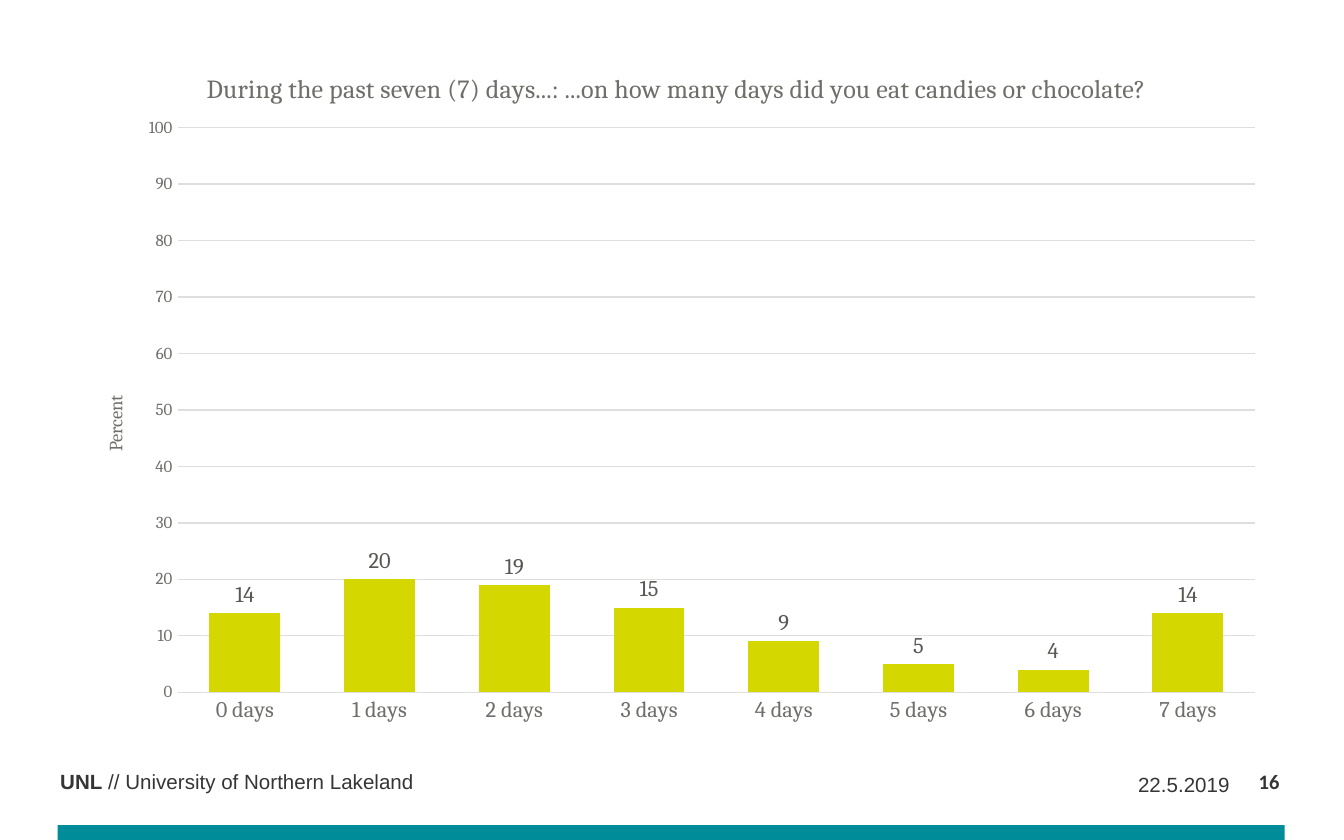
from pptx import Presentation
from pptx.chart.data import CategoryChartData
from pptx.dml.color import RGBColor
from pptx.enum.chart import XL_CHART_TYPE, XL_LABEL_POSITION, XL_TICK_MARK
from pptx.enum.shapes import MSO_SHAPE
from pptx.enum.text import MSO_ANCHOR, PP_ALIGN
from pptx.oxml import parse_xml
from pptx.oxml.ns import nsdecls, qn
from pptx.util import Inches, Pt

COLUMN = XL_CHART_TYPE.COLUMN_CLUSTERED
ABOVE = XL_LABEL_POSITION.OUTSIDE_END
NO_TICK = XL_TICK_MARK.NONE
RECT = MSO_SHAPE.RECTANGLE
LEFT, RIGHT = PP_ALIGN.LEFT, PP_ALIGN.RIGHT
TOP, MIDDLE = MSO_ANCHOR.TOP, MSO_ANCHOR.MIDDLE


class Theme:
    serif, sans, digit = "Cambria", "Arial", "Calibri"
    ink, teal, lime = "353535", "008C99", "D4D800"
    gray, label, rule = "6E6E6A", "575754", "DEDEDC"
    head, body, foot, unit, tick = 14, 12, 11, 10, 9


QUERY = ("During the past seven (7) days...: ...on how many days "
         "did you eat candies or chocolate?")
SHARES = [14, 20, 19, 15, 9, 5, 4, 14]


def style(font, size, color, face=Theme.serif, bold=False):
    font.size, font.name, font.bold = Pt(size), face, bold
    font.color.rgb = RGBColor.from_string(color)


def rule(line):
    line.color.rgb = RGBColor.from_string(Theme.rule)
    line.width = Pt(0.75)


def lay_out(x, y, w=None, h=None):
    """Make a chart layout from fractions of the chart's size."""
    inner = '<c:layoutTarget val="inner"/>' if w else ""
    size = f'<c:w val="{w}"/><c:h val="{h}"/>' if w else ""
    return parse_xml(
        f'<c:layout {nsdecls("c")}><c:manualLayout>{inner}'
        '<c:xMode val="edge"/><c:yMode val="edge"/>'
        f'<c:x val="{x}"/><c:y val="{y}"/>{size}'
        '</c:manualLayout></c:layout>')


def set_title(title, text, size, x, y):
    frame = title.text_frame
    frame.text = text
    style(frame.paragraphs[0].font, size, Theme.gray)
    node = title._element
    for old in node.findall(qn("c:layout")):
        node.remove(old)
    node.find(qn("c:tx")).addnext(lay_out(x, y))


def add_text(slide, box, runs, face=Theme.sans, bold=False,
             align=LEFT, anchor=TOP, pads=(0, 0, 0, 0)):
    frame = slide.shapes.add_textbox(*map(Inches, box)).text_frame
    frame.word_wrap = True
    frame.vertical_anchor = anchor
    (frame.margin_left, frame.margin_top,
     frame.margin_right, frame.margin_bottom) = map(Inches, pads)
    para = frame.paragraphs[0]
    para.alignment = align
    style(para.font, Theme.foot, Theme.ink, face, bold)
    for text in runs:
        para.add_run().text = text
    return para


def add_footer(slide, box):
    x, y, w, h = box
    # Name of the school
    para = add_text(slide, (x - 0.08, y, 3.86, 0.29),
                    ["UNL", " // University of Northern Lakeland"],
                    pads=(0.1, 0.05, 0.1, 0.05))
    para.runs[0].font.bold = True
    # Date and page number
    add_text(slide, (x + w - 1.37, y + 0.05, 0.96, 0.23), ["22.5.2019"],
             align=RIGHT, anchor=MIDDLE)
    add_text(slide, (x + w - 0.43, y + 0.03, 0.39, 0.23), ["16"],
             Theme.digit, True, RIGHT, pads=(0, 0.02, 0, 0))
    # Bottom band
    band = slide.shapes.add_shape(
        RECT, *map(Inches, (x, y + h - 0.13, w, 0.13)))
    band.shadow.inherit = False
    band.fill.solid()
    band.fill.fore_color.rgb = RGBColor.from_string(Theme.teal)
    band.line.fill.background()


def add_columns(slide, box):
    data = CategoryChartData(number_format="#,##0")
    data.categories = [f"{day} days" for day in range(len(SHARES))]
    data.add_series("Series 1", SHARES)
    chart = slide.shapes.add_chart(COLUMN, *map(Inches, box), data).chart
    chart.has_legend = False
    style(chart.font, Theme.unit, Theme.gray)
    set_title(chart.chart_title, QUERY, Theme.head, 0.11, 0.04)

    # Axes
    days, share = chart.category_axis, chart.value_axis
    days.major_tick_mark = share.major_tick_mark = NO_TICK
    style(days.tick_labels.font, Theme.body, Theme.gray)
    style(share.tick_labels.font, Theme.tick, Theme.gray)
    rule(days.format.line)
    rule(share.major_gridlines.format.line)
    share.format.line.fill.background()
    share.minimum_scale, share.maximum_scale = 0, 100
    share.major_unit = 10
    set_title(share.axis_title, "Percent", Theme.unit, 0.026, 0.505)

    # Columns and their labels
    plot = chart.plots[0]
    plot.gap_width, plot.overlap = 90, -27
    plot.vary_by_categories = False
    fill = plot.series[0].format.fill
    fill.solid()
    fill.fore_color.rgb = RGBColor.from_string(Theme.lime)
    tags = plot.series[0].data_labels
    tags.show_value = True
    tags.position = ABOVE
    tags.number_format, tags.number_format_is_linked = "#,##0", False
    style(tags.font, Theme.body, Theme.label)

    # Place of the plot within the chart
    area = chart._chartSpace.chart.plotArea
    for old in area.findall(qn("c:layout")):
        area.remove(old)
    area.insert(0, lay_out(0.09, 0.127, 0.889, 0.808))


def main():
    deck = Presentation()
    deck.slide_width, deck.slide_height = Inches(10), Inches(6.25)
    slide = deck.slides.add_slide(deck.slide_layouts[6])
    add_footer(slide, (0.43, 5.67, 9.13, 0.6))
    add_columns(slide, (0.51, 0.29, 9.02, 5.2))
    deck.save("out.pptx")


if __name__ == "__main__":
    main()
